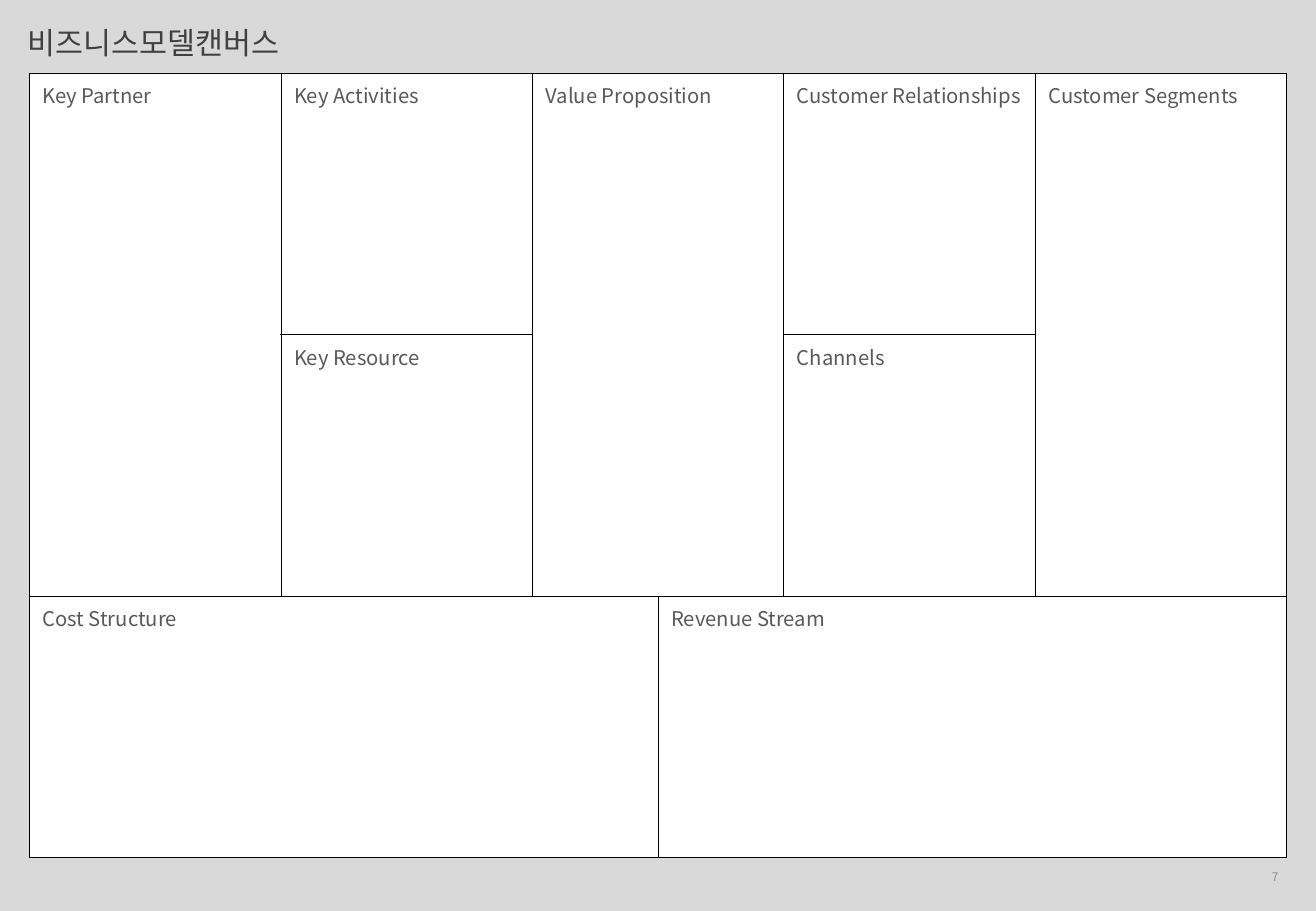
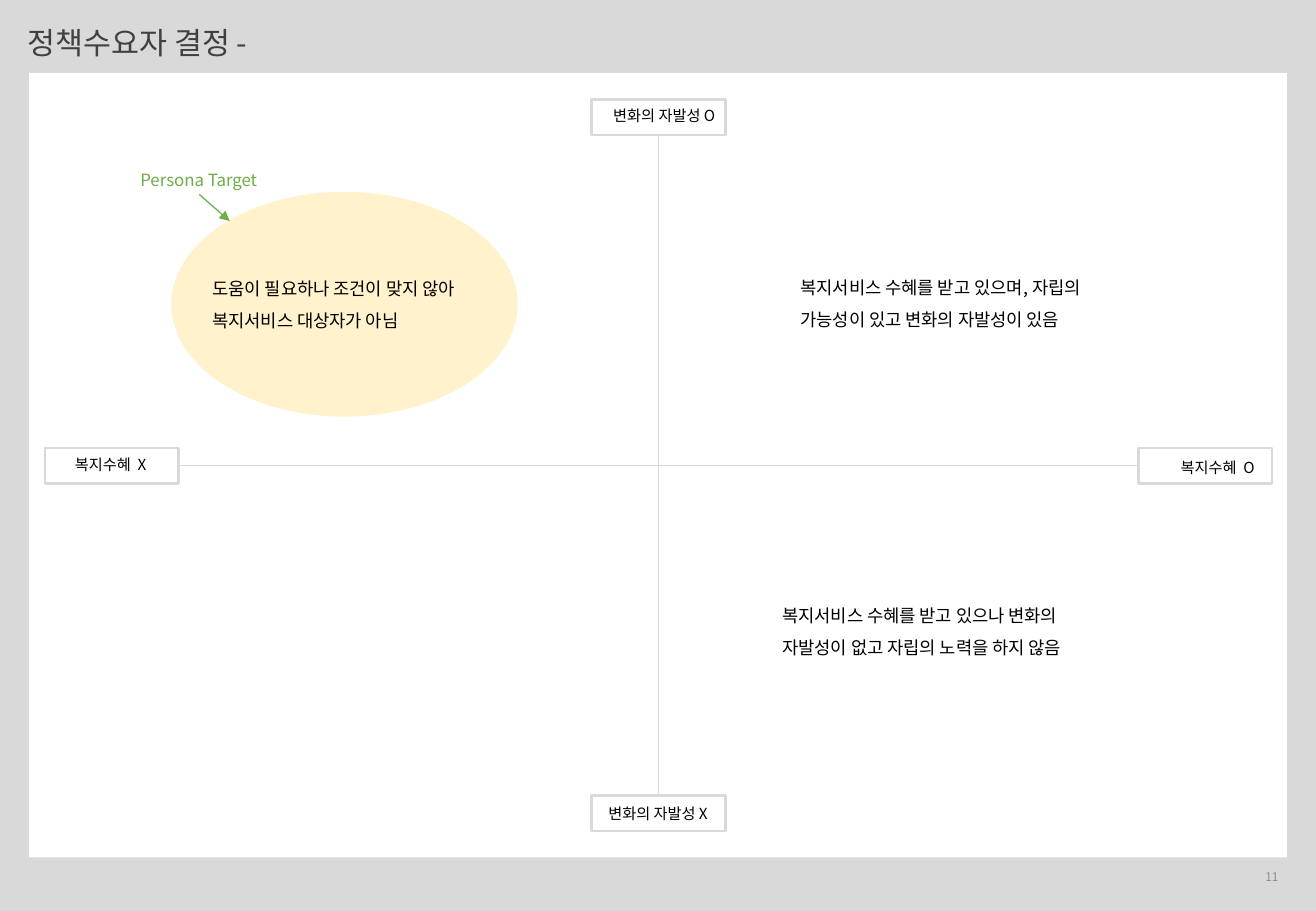
"""Builds a business model canvas slide and a policy target quadrant slide."""
from dataclasses import dataclass

from lxml import etree
from pptx import Presentation
from pptx import util as u
from pptx.dml.color import RGBColor
from pptx.enum import shapes, text
from pptx.oxml.ns import qn


@dataclass(frozen=True)
class Theme:
    font: str = "Noto Sans CJK KR"
    backdrop: str = "D9D9D9"
    paper: str = "FFFFFF"
    title: str = "404040"
    heading: str = "595959"
    ink: str = "000000"
    number: str = "8C8C8C"
    accent: str = "70AD47"
    highlight: str = "FFF2CC"
    title_size: float = 18
    heading_size: float = 12
    body_size: float = 10.5
    callout_size: float = 10
    label_size: float = 9
    number_size: float = 7


THEME = Theme()
PANEL = (0.24, 0.6, 10.35, 6.46)

CANVAS_TITLE = ("비즈니스모델캔버스", 2.33, "7")
COLUMN_UNITS = (2, 2, 1, 1, 2, 2)
CANVAS_ROWS = 3
CANVAS_CELLS = [
    ("Key Partner", 0, 0, 2, 1),
    ("Key Activities", 0, 1, 1, 1),
    ("Value Proposition", 0, 2, 2, 2),
    ("Customer Relationships", 0, 4, 1, 1),
    ("Customer Segments", 0, 5, 2, 1),
    ("Key Resource", 1, 1, 1, 1),
    ("Channels", 1, 4, 1, 1),
    ("Cost Structure", 2, 0, 1, 3),
    ("Revenue Stream", 2, 3, 1, 3),
]

TARGET_TITLE = ("정책수요자 결정 -", 2.1, "11")
AXES = [((5.42, 1.1), (5.42, 6.55)), ((1.46, 3.83), (9.37, 3.83))]
AXIS_BOX = (1.1, 0.29)
AXIS_ENDS = [
    ((0.37, 3.69), "복지수혜  X", (0.4, 3.7, 1.02, 0.25)),
    ((9.37, 3.69), "복지수혜  O", (9.51, 3.72, 1.02, 0.25)),
    ((4.87, 0.82), "변화의 자발성 O", (4.87, 0.83, 1.19, 0.25)),
    ((4.87, 6.55), "변화의 자발성 X", (4.82, 6.57, 1.19, 0.25)),
]
PERSONA_OVAL = (1.41, 1.58, 2.85, 1.85)
QUADRANTS = [
    ("복지서비스 수혜를 받고 있으며, 자립의 가능성이 있고 변화의 자발성이 있음",
     (6.49, 2.14, 2.91, 0.63)),
    ("복지서비스 수혜를 받고 있으나 변화의 자발성이 없고 자립의 노력을 하지 않음",
     (6.34, 4.84, 2.91, 0.63)),
    ("도움이 필요하나 조건이 맞지 않아 복지서비스 대상자가 아님",
     (1.65, 2.15, 2.37, 0.63)),
]
PERSONA_LABEL = ("Persona Target", (0.9, 1.3, 1.47, 0.32))
PERSONA_ARROW = ((1.64, 1.6), (1.89, 1.82))


def inches(values):
    return [u.Inches(value) for value in values]


def style_text(frame, content, size, color, align=None, spacing=None):
    frame.text = content
    para = frame.paragraphs[0]
    para.alignment = align
    para.line_spacing = spacing
    span = para.runs[0]
    span.font.size = u.Pt(size)
    span.font.name = THEME.font
    span.font.color.rgb = RGBColor.from_string(color)
    east_asian = etree.SubElement(span.font._element, qn("a:ea"))
    east_asian.set("typeface", THEME.font)


def add_text(page, content, area, size, color, align=None, spacing=None, wrap=True):
    box = page.shapes.add_textbox(*inches(area))
    box.text_frame.word_wrap = wrap
    box.text_frame.auto_size = text.MSO_AUTO_SIZE.SHAPE_TO_FIT_TEXT
    style_text(box.text_frame, content, size, color, align, spacing)
    return box


def add_box(page, kind, area, fill=None, line=None, weight=1.5):
    box = page.shapes.add_shape(kind, *inches(area))
    box.shadow.inherit = False
    if fill:
        box.fill.solid()
        box.fill.fore_color.rgb = RGBColor.from_string(fill)
    else:
        box.fill.background()
    if line:
        box.line.color.rgb = RGBColor.from_string(line)
        box.line.width = u.Pt(weight)
    else:
        box.line.fill.background()


def add_line(page, start, end, color, weight, arrow=False):
    line = page.shapes.add_connector(shapes.MSO_CONNECTOR.STRAIGHT, *inches(start + end))
    line.line.color.rgb = RGBColor.from_string(color)
    line.line.width = u.Pt(weight)
    if arrow:
        etree.SubElement(line.line._get_or_add_ln(), qn("a:tailEnd")).set("type", "triangle")
    etree.SubElement(line._element.spPr, qn("a:effectLst"))


def add_page(deck, title, title_width, number):
    page = deck.slides.add_slide(deck.slide_layouts[6])
    page.background.fill.solid()
    page.background.fill.fore_color.rgb = RGBColor.from_string(THEME.backdrop)
    footer = add_text(page, number, (8.18, 7.02, 2.44, 0.4), THEME.number_size,
                      THEME.number, text.PP_ALIGN.RIGHT)
    footer.text_frame.auto_size = text.MSO_AUTO_SIZE.NONE
    footer.text_frame.vertical_anchor = text.MSO_ANCHOR.MIDDLE
    add_text(page, title, (0.13, 0, title_width, 0.56), THEME.title_size,
             THEME.title, spacing=1.5, wrap=False)
    add_box(page, shapes.MSO_SHAPE.RECTANGLE, PANEL, THEME.paper)
    return page


def style_cell(cell):
    cell.margin_left = cell.margin_right = u.Inches(0.11)
    cell.margin_top = cell.margin_bottom = u.Inches(0.06)
    properties = cell._tc.get_or_add_tcPr()
    for side in ("lnL", "lnR", "lnT", "lnB"):
        border = etree.SubElement(properties, qn(f"a:{side}"), w=str(u.Pt(0.25)))
        fill = etree.SubElement(border, qn("a:solidFill"))
        etree.SubElement(fill, qn("a:srgbClr"), val=THEME.ink)
    cell.fill.solid()
    cell.fill.fore_color.rgb = RGBColor.from_string(THEME.paper)


def build_canvas(deck):
    page = add_page(deck, *CANVAS_TITLE)
    table = page.shapes.add_table(CANVAS_ROWS, len(COLUMN_UNITS), *inches(PANEL)).table
    table.first_row = table.horz_banding = False
    for column, units in zip(table.columns, COLUMN_UNITS):
        column.width = u.Inches(PANEL[2] * units / sum(COLUMN_UNITS))
    for row in table.rows:
        row.height = u.Inches(PANEL[3] / CANVAS_ROWS)
    for cell in table.iter_cells():
        style_cell(cell)
    for heading, row, column, height, width in CANVAS_CELLS:
        cell = table.cell(row, column)
        if height * width > 1:
            cell.merge(table.cell(row + height - 1, column + width - 1))
        style_text(cell.text_frame, heading, THEME.heading_size, THEME.heading)


def build_target(deck):
    page = add_page(deck, *TARGET_TITLE)
    for start, end in AXES:
        add_line(page, start, end, THEME.backdrop, 0.5)
    for corner, label, area in AXIS_ENDS:
        add_box(page, shapes.MSO_SHAPE.RECTANGLE, corner + AXIS_BOX, line=THEME.backdrop)
        add_text(page, label, area, THEME.label_size, THEME.ink, text.PP_ALIGN.CENTER)
    add_box(page, shapes.MSO_SHAPE.OVAL, PERSONA_OVAL, THEME.highlight)
    for content, area in QUADRANTS:
        add_text(page, content, area, THEME.body_size, THEME.ink, spacing=1.5)
    add_text(page, *PERSONA_LABEL, THEME.callout_size, THEME.accent,
             text.PP_ALIGN.CENTER, 1.3)
    add_line(page, *PERSONA_ARROW, THEME.accent, 0.75, arrow=True)


def main():
    deck = Presentation()
    deck.slide_width, deck.slide_height = inches((10.83, 7.5))
    build_canvas(deck)
    build_target(deck)
    deck.save("out.pptx")


if __name__ == "__main__":
    main()
